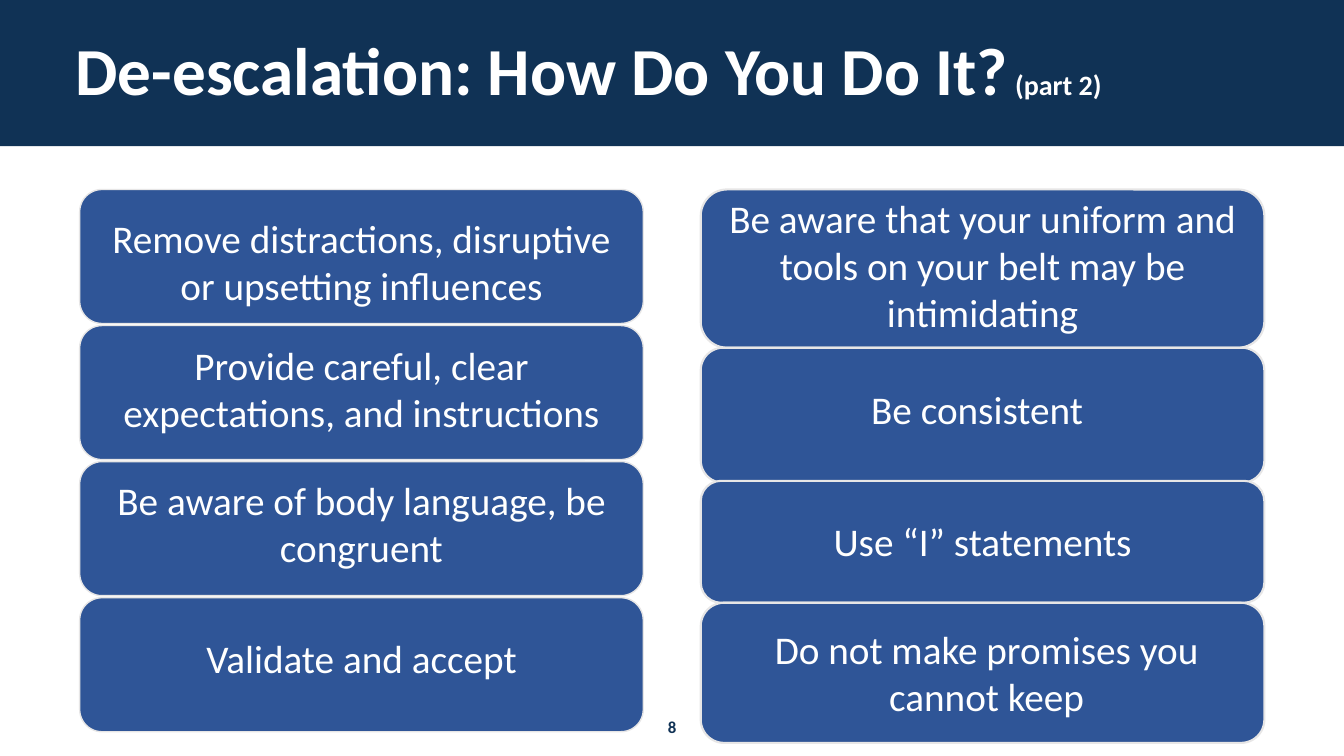
import pptx
import pptx.util
import pptx.dml.color
import pptx.enum.shapes
import pptx.enum.text

Inches = pptx.util.Inches
Pt = pptx.util.Pt
RGBColor = pptx.dml.color.RGBColor
SHAPE = pptx.enum.shapes.MSO_SHAPE
ALIGN = pptx.enum.text.PP_ALIGN
ANCHOR = pptx.enum.text.MSO_ANCHOR
AUTO = pptx.enum.text.MSO_AUTO_SIZE

NAVY = RGBColor(0x10, 0x32, 0x55)
BLUE = RGBColor(0x2F, 0x55, 0x97)
PALE = RGBColor(0xE7, 0xE6, 0xE6)
WHITE = RGBColor(0xFF, 0xFF, 0xFF)

CARD_WIDTH = 5.59
# (card offset, card height, label left, label top, label width, text)
LEFT_CARDS = [
    (0, 1.33, 0.08, 0.33, 5.43, "Remove distractions, disruptive or upsetting influences"),
    (1.35, 1.33, 0.08, 0.24, 5.43, "Provide careful, clear expectations, and instructions"),
    (2.7, 1.33, 0.08, 0.23, 5.43, "Be aware of body language, be congruent"),
    (4.05, 1.33, 0.08, 0.22, 5.43, "Validate and accept"),
]
RIGHT_CARDS = [
    (0, 1.57, 0.03, 0.37, 5.53, "Be aware that your uniform and tools on your belt may be intimidating"),
    (1.57, 1.34, 0.28, 0.23, 4.92, "Be consistent"),
    (2.89, 1.21, 0.28, 0.22, 5.03, "Use “I” statements"),
    (4.1, 1.39, 0.28, 0.31, 5.11, "Do not make promises you cannot keep"),
]


def set_font(font, size, color, bold=False):
    font.name = "Calibri"
    font.size = Pt(size)
    font.bold = bold
    font.color.rgb = color


def add_block(s, preset, left, top, width, height, fill):
    sp = s.shapes.add_shape(preset, Inches(left), Inches(top), Inches(width), Inches(height))
    sp.shadow.inherit = False
    sp.fill.solid()
    sp.fill.fore_color.rgb = fill
    sp.line.fill.background()
    return sp


def add_label(s, left, top, width, height, text, size, color, bold=False):
    sp = s.shapes.add_textbox(Inches(left), Inches(top), Inches(width), Inches(height))
    tf = sp.text_frame
    tf.word_wrap = True
    tf.vertical_anchor = ANCHOR.MIDDLE
    p = tf.paragraphs[0]
    p.text = text
    p.alignment = ALIGN.CENTER
    set_font(p.font, size, color, bold)


def add_header(s, left, top, width, height):
    bar = add_block(s, SHAPE.RECTANGLE, left, top, width, height, NAVY)
    title = s.shapes.title
    title.element.addprevious(bar.element)
    title.left, title.top = Inches(left + 0.65), Inches(top + 0.4)
    title.width, title.height = Inches(width - 1.29), Inches(0.67)
    tf = title.text_frame
    tf.auto_size = AUTO.NONE
    tf.word_wrap = True
    tf.vertical_anchor = ANCHOR.MIDDLE
    p = tf.paragraphs[0]
    p.alignment = ALIGN.LEFT
    p.line_spacing = 0.9
    set_font(p.font, 48, WHITE, True)
    p.add_run().text = "De-escalation: How Do You Do It?"
    r = p.add_run()
    r.text = " (part 2)"
    r.font.size = Pt(20)


def add_card_column(s, left, top, cards, line_width):
    for offset, height, *_ in cards:
        card = add_block(s, SHAPE.ROUNDED_RECTANGLE, left, top + offset, CARD_WIDTH, height, BLUE)
        card.line.color.rgb = PALE
        card.line.width = Pt(line_width)
    for offset, _, label_left, label_top, label_width, text in cards:
        add_label(s, left + label_left, top + offset + label_top, label_width, 0.76, text, 28, WHITE)


def main():
    prs = pptx.Presentation()
    prs.slide_width, prs.slide_height = Inches(13.33), Inches(7.5)
    s = prs.slides.add_slide(prs.slide_layouts.get_by_name("Title Only"))
    add_header(s, 0, 0, 13.33, 1.45)
    add_label(s, 6.09, 7.06, 1.15, 0.3, "8", 12, NAVY, True)
    add_card_column(s, 0.79, 1.88, LEFT_CARDS, 1)
    add_card_column(s, 6.95, 1.88, RIGHT_CARDS, 1.5)
    prs.save("out.pptx")


if __name__ == "__main__":
    main()
